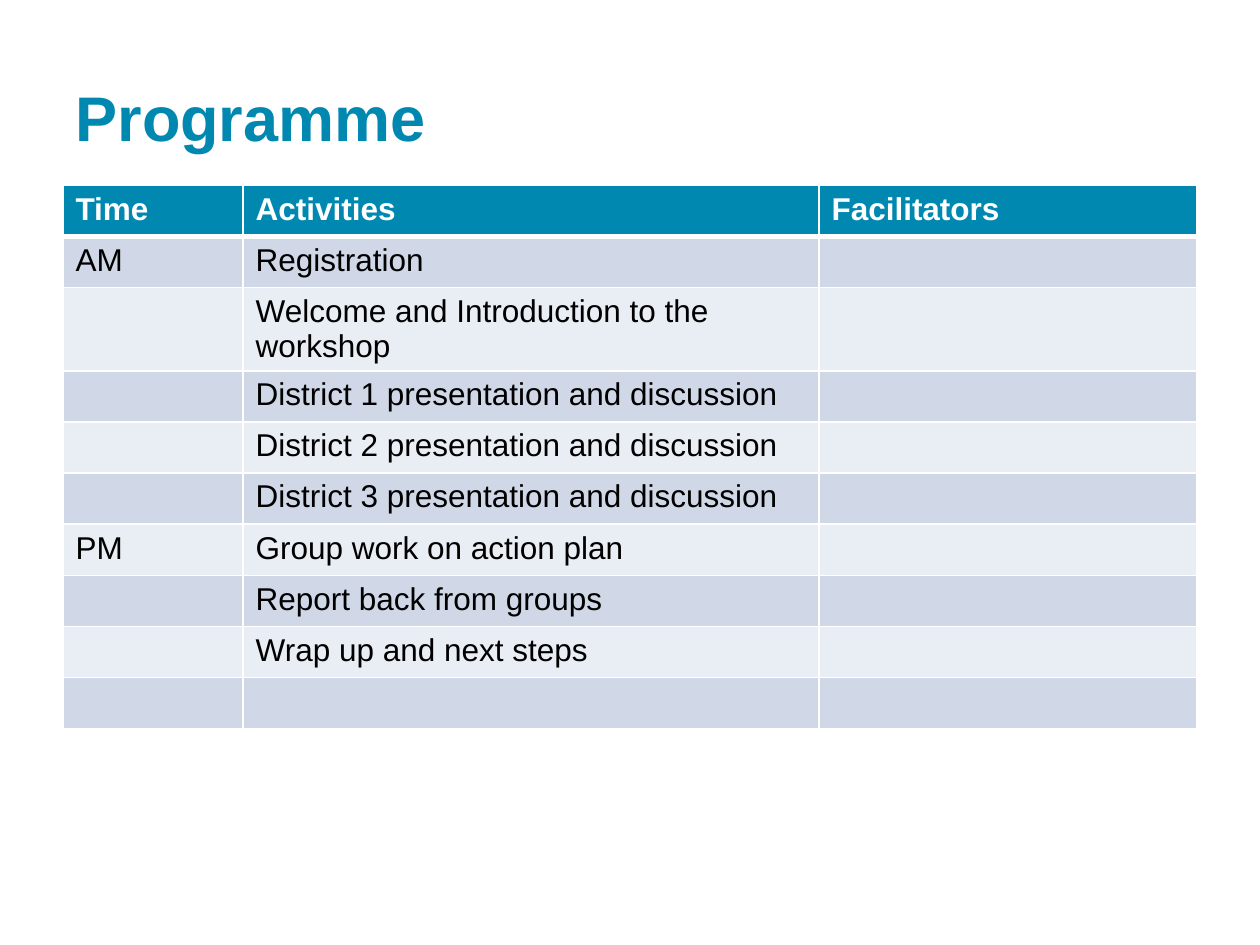
from lxml import etree
from pptx import Presentation
from pptx.dml.color import RGBColor
from pptx.enum.text import MSO_ANCHOR, PP_ALIGN
from pptx.oxml.ns import qn
from pptx.util import Cm, Pt

LEFT, MIDDLE = PP_ALIGN.LEFT, MSO_ANCHOR.MIDDLE
TEAL, WHITE, BLACK = "0088B0", "FFFFFF", "000000"
BANDS = ("D0D8E8", "E9EDF4")

TITLE = "Programme"
ROWS = [
    ("Time", "Activities", "Facilitators"),
    ("AM", "Registration", ""),
    ("", "Welcome and Introduction to the workshop", ""),
    ("", "District 1 presentation and discussion", ""),
    ("", "District 2 presentation and discussion", ""),
    ("", "District 3 presentation and discussion", ""),
    ("PM", "Group work on action plan", ""),
    ("", "Report back from groups", ""),
    ("", "Wrap up and next steps", ""),
    ("", "", ""),
]
WIDTHS = (3.63, 11.61, 7.62)
ROW_H = 1.03
MARGIN = 1.27


def color(code):
    return RGBColor.from_string(code)


def style(par, size, code, bold):
    font = par.font
    font.name, font.size, font.bold = "Arial", Pt(size), bold
    font.color.rgb = color(code)


def rule(cell, side, width):
    """Draw a white border on one side (L, R, T or B) of a cell."""
    props = cell._tc.get_or_add_tcPr()
    line = etree.SubElement(props, qn(f"a:ln{side}"), w=str(Pt(width)))
    fill = etree.SubElement(line, qn("a:solidFill"))
    etree.SubElement(fill, qn("a:srgbClr"), val=WHITE)


def add_title(slide):
    title = slide.shapes.title
    title.left, title.top = Cm(MARGIN), Cm(0.76)
    title.width, title.height = Cm(sum(WIDTHS)), Cm(3.18)
    frame = title.text_frame
    frame.text = TITLE
    frame.vertical_anchor = MIDDLE
    par = frame.paragraphs[0]
    par.alignment = LEFT
    style(par, 36, TEAL, True)


def add_plan(slide):
    table = slide.shapes.add_table(
        len(ROWS), len(WIDTHS), Cm(MARGIN), Cm(3.74),
        Cm(sum(WIDTHS)), Cm(ROW_H * len(ROWS))).table
    for col, width in zip(table.columns, WIDTHS):
        col.width = Cm(width)
    for r, texts in enumerate(ROWS):
        table.rows[r].height = Cm(ROW_H)
        head = r == 0
        for c, text in enumerate(texts):
            cell = table.cell(r, c)
            cell.text = text
            style(cell.text_frame.paragraphs[0], 18,
                  WHITE if head else BLACK, head)
            for side in "LRTB":
                thick = (head and side == "B") or (r == 1 and side == "T")
                rule(cell, side, 3 if thick else 1)
            cell.fill.solid()
            cell.fill.fore_color.rgb = color(
                TEAL if head else BANDS[(r - 1) % 2])


def main():
    deck = Presentation()
    deck.slide_width, deck.slide_height = Cm(25.4), Cm(19.05)
    slide = deck.slides.add_slide(deck.slide_layouts.get_by_name("Title Only"))
    add_title(slide)
    add_plan(slide)
    deck.save("out.pptx")


if __name__ == "__main__":
    main()
